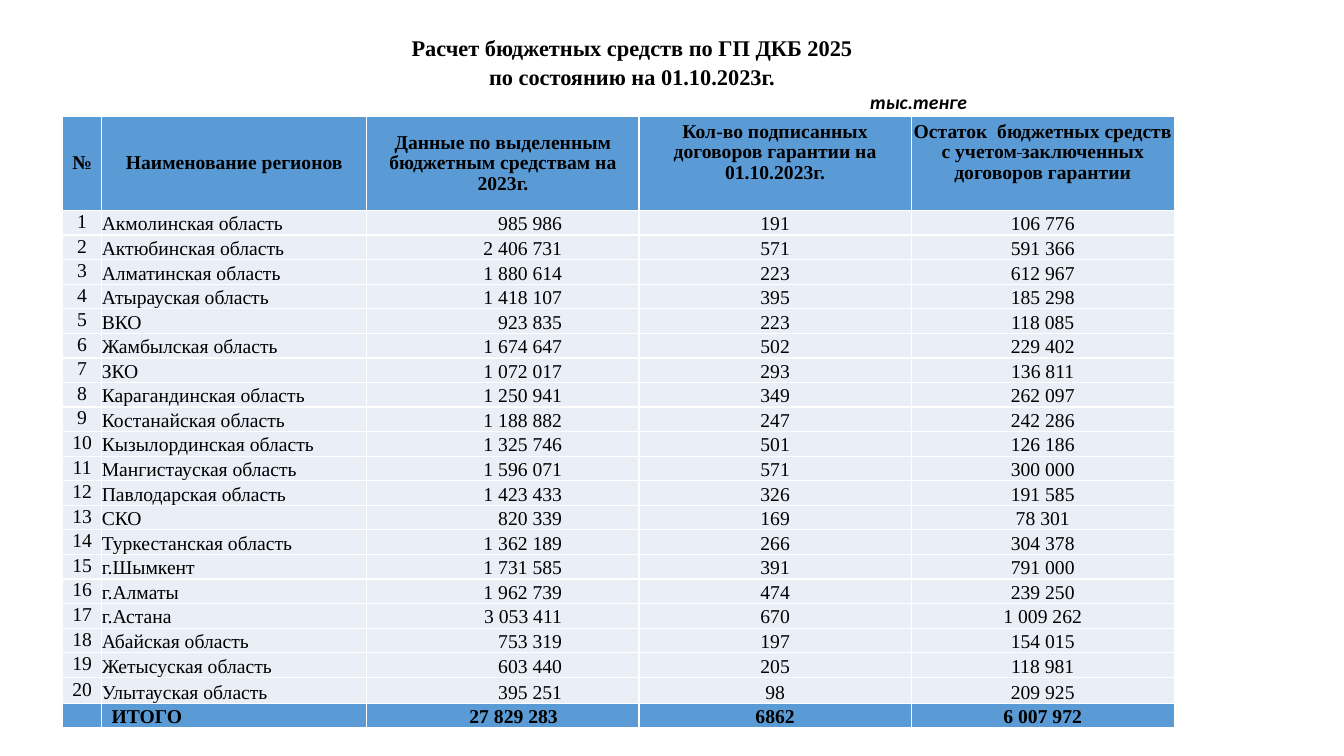
"""Build the slide with the regional budget table of the guarantee programme."""
from lxml import etree
from pptx import Presentation
from pptx.dml.color import RGBColor
from pptx.enum.text import MSO_ANCHOR, PP_ALIGN
from pptx.oxml.ns import qn
from pptx.util import Pt

TITLE = "Расчет бюджетных средств по ГП ДКБ 2025\vпо состоянию на 01.10.2023г."
UNIT = "тыс.тенге"
HEADERS = [
    ["№"],
    ["Наименование регионов"],
    ["Данные по выделенным бюджетным средствам на 2023г."],
    ["Кол-во подписанных договоров гарантии на 01.10.2023г."],
    ["Остаток  бюджетных средств с учетом", " ", "заключенных договоров гарантии"],
]
REGIONS = [
    ("Акмолинская область", 985986, 191, 106776),
    ("Актюбинская область", 2406731, 571, 591366),
    ("Алматинская область", 1880614, 223, 612967),
    ("Атырауская область", 1418107, 395, 185298),
    ("ВКО", 923835, 223, 118085),
    ("Жамбылская область", 1674647, 502, 229402),
    ("ЗКО", 1072017, 293, 136811),
    ("Карагандинская область", 1250941, 349, 262097),
    ("Костанайская область", 1188882, 247, 242286),
    ("Кызылординская область", 1325746, 501, 126186),
    ("Мангистауская область", 1596071, 571, 300000),
    ("Павлодарская область", 1423433, 326, 191585),
    ("СКО", 820339, 169, 78301),
    ("Туркестанская область", 1362189, 266, 304378),
    ("г.Шымкент", 1731585, 391, 791000),
    ("г.Алматы", 1962739, 474, 239250),
    ("г.Астана", 3053411, 670, 1009262),
    ("Абайская область", 753319, 197, 154015),
    ("Жетысуская область", 603440, 205, 118981),
    ("Улытауская область", 395251, 98, 209925),
]
TOTAL = ("ИТОГО", 27829283, 6862, 6007972)

BLACK = RGBColor(0, 0, 0)
WHITE = RGBColor(0xFF, 0xFF, 0xFF)
BLUE = RGBColor(0x5B, 0x9B, 0xD5)
PALE_BLUE = RGBColor(0xEA, 0xEF, 0xF7)
LEFT, CENTER, RIGHT = PP_ALIGN.LEFT, PP_ALIGN.CENTER, PP_ALIGN.RIGHT
TOP, MIDDLE, BOTTOM = MSO_ANCHOR.TOP, MSO_ANCHOR.MIDDLE, MSO_ANCHOR.BOTTOM
SERIF, SANS = "Times New Roman", "Calibri"

TITLE_BOX = (30.24, 20.16, 842.4, 79.92)
UNIT_INDENT = 584
TABLE_LEFT, TABLE_TOP = 44.64, 83.4
COLUMN_WIDTHS = [28.08, 189.36, 194.4, 194.4, 187.92]
ROW_HEIGHTS = [67] + [17.57] * 19 + [18.72, 17.5]
COLUMN_ALIGNMENTS = [CENTER, LEFT, RIGHT, CENTER, CENTER]
VALUE_MARGINS = (0.72, 0.72, 0.72, 0)
BODY_MARGINS = [(0, 0, 0, 1.4), (0, 0, 0, 0), (0.72, 0.72, 55, 0), VALUE_MARGINS, VALUE_MARGINS]
TOTAL_MARGINS = [(0, 0, 0, 0), (7, 0, 0, 0), (0.72, 0.72, 58, 0), VALUE_MARGINS, VALUE_MARGINS]
HEADER_MARGINS = [(0, 0, 0, 0)] * 3 + [(0, 0, 0, 15.6)] * 2


def set_attributes(target, values):
    for name, value in values.items():
        setattr(target, name, value)


def format_font(font, **values):
    set_attributes(font, {"name": SERIF, "size": Pt(14), "bold": False, **values})
    font.color.rgb = BLACK


def spaced(number):
    return f"{number:,}".replace(",", " ")


def row_texts(number, row):
    region, allocated, contracts, balance = row
    return [[number], [region], [spaced(allocated)], [str(contracts)], [spaced(balance)]]


def add_borders(cell):
    properties = cell._tc.get_or_add_tcPr()
    for side in ("lnL", "lnR", "lnT", "lnB"):
        line = etree.SubElement(properties, qn(f"a:{side}"), w=str(Pt(1)))
        fill = etree.SubElement(line, qn("a:solidFill"))
        etree.SubElement(fill, qn("a:srgbClr"), val=str(WHITE))


def fill_cell(cell, texts, margins, alignment, anchor, color, bold, spacing):
    add_borders(cell)
    cell.fill.solid()
    cell.fill.fore_color.rgb = color
    sides = ("margin_left", "margin_top", "margin_right", "margin_bottom")
    set_attributes(cell, dict(zip(sides, map(Pt, margins))))
    cell.vertical_anchor = anchor
    paragraph = cell.text_frame.paragraphs[0]
    set_attributes(paragraph, {"alignment": alignment, "line_spacing": spacing})
    for text in filter(None, texts):
        run = paragraph.add_run()
        run.text = text
        format_font(run.font, bold=bold)
        if text == " ":
            run._r.get_or_add_rPr().set("strike", "sngStrike")
    if not any(texts):
        etree.SubElement(paragraph._p, qn("a:endParaRPr"), sz="1400")


def add_title(slide):
    title = slide.shapes.title
    set_attributes(title, dict(zip(("left", "top", "width", "height"), map(Pt, TITLE_BOX))))
    frame = title.text_frame
    set_attributes(frame, {"word_wrap": True, "vertical_anchor": TOP})
    heading = frame.paragraphs[0]
    heading.text = TITLE
    set_attributes(heading, {"alignment": CENTER, "line_spacing": 1.05})
    for run in heading.runs:
        format_font(run.font, size=Pt(16), bold=True)
    unit = frame.add_paragraph()
    unit.text = UNIT
    set_attributes(unit, {"alignment": LEFT, "space_before": Pt(0)})
    unit._p.get_or_add_pPr().set("marL", str(Pt(UNIT_INDENT)))
    format_font(unit.runs[0].font, name=SANS, bold=True, italic=True)


def add_region_table(slide):
    table = slide.shapes.add_table(
        len(ROW_HEIGHTS), len(COLUMN_WIDTHS), Pt(TABLE_LEFT), Pt(TABLE_TOP),
        Pt(sum(COLUMN_WIDTHS)), Pt(sum(ROW_HEIGHTS))).table
    table.horz_banding = False
    for column, width in zip(table.columns, COLUMN_WIDTHS):
        column.width = Pt(width)
    for row, height in zip(table.rows, ROW_HEIGHTS):
        row.height = Pt(height)
    body = [row_texts(str(number), row) for number, row in enumerate(REGIONS, 1)]
    rows = [HEADERS, *body, row_texts("", TOTAL)]
    last = len(rows) - 1
    for row_index, texts in enumerate(rows):
        is_header, is_total = row_index == 0, row_index == last
        strong = is_header or is_total
        margins = HEADER_MARGINS if is_header else TOTAL_MARGINS if is_total else BODY_MARGINS
        for column_index, cell_texts in enumerate(texts):
            fill_cell(
                table.cell(row_index, column_index), cell_texts, margins[column_index],
                CENTER if is_header else COLUMN_ALIGNMENTS[column_index],
                MIDDLE if is_header or column_index == 0 else BOTTOM,
                BLUE if strong else PALE_BLUE, strong, 0.96 if is_header else 1.0)


def main():
    presentation = Presentation()
    set_attributes(presentation, {"slide_width": Pt(960), "slide_height": Pt(540)})
    slide = presentation.slides.add_slide(presentation.slide_layouts[5])
    add_title(slide)
    add_region_table(slide)
    presentation.save("out.pptx")


if __name__ == "__main__":
    main()
